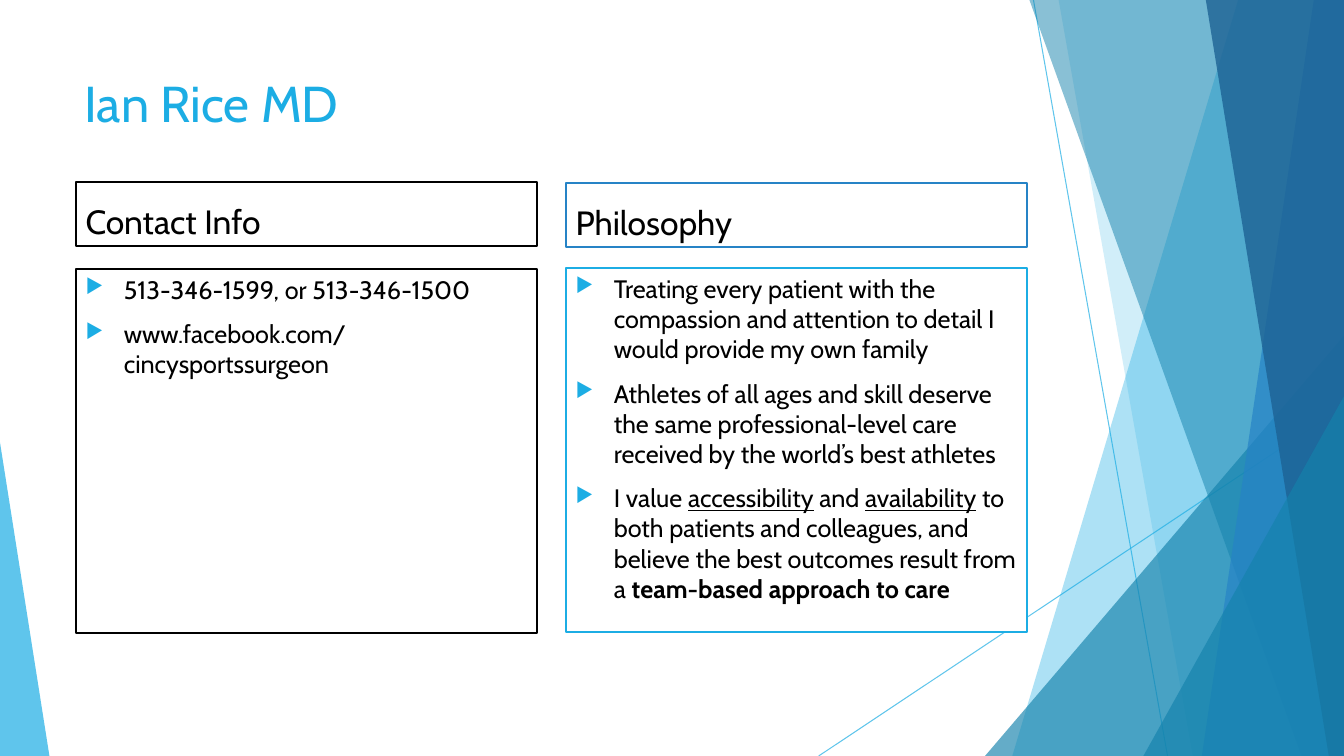
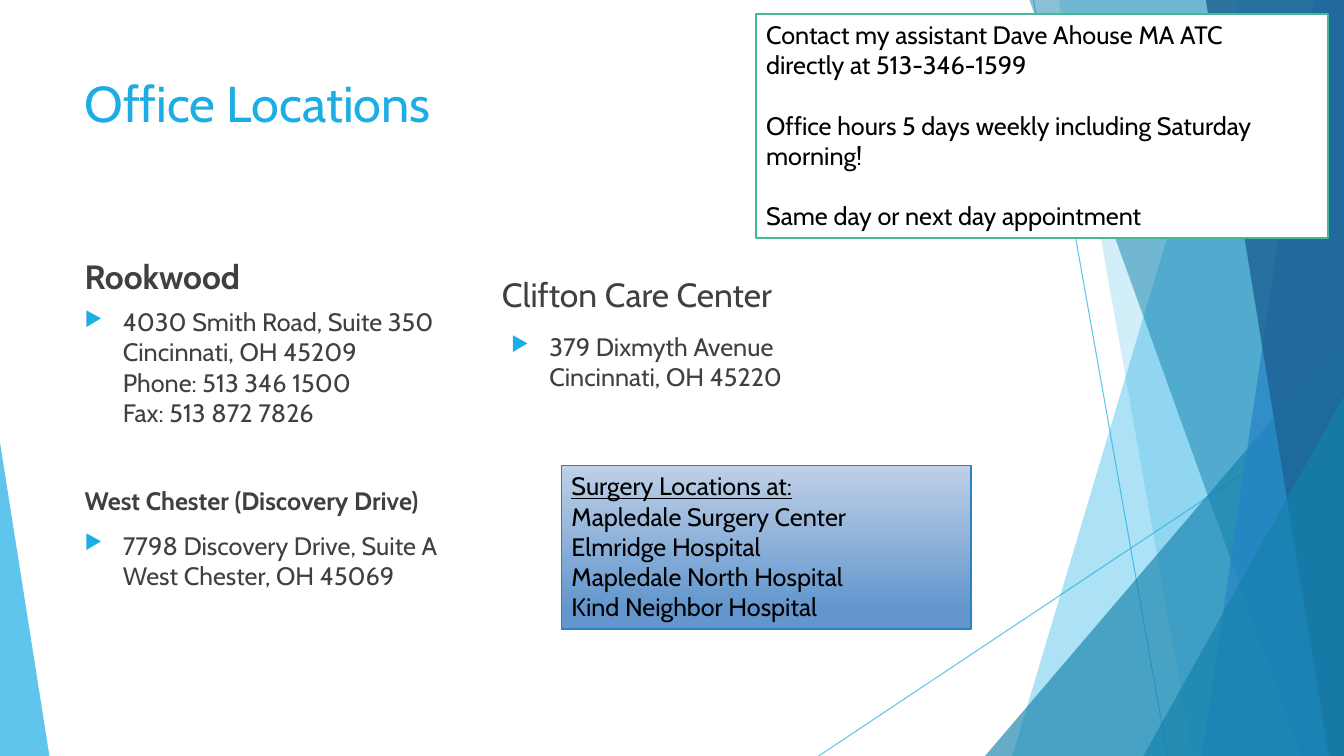
from dataclasses import dataclass

from lxml import etree
from pptx import Presentation
from pptx.dml.color import RGBColor
from pptx.enum.shapes import MSO_CONNECTOR, MSO_SHAPE
from pptx.enum.text import MSO_ANCHOR, PP_ALIGN
from pptx.oxml.ns import qn
from pptx.util import Inches, Pt

RECTANGLE, TRIANGLE = MSO_SHAPE.RECTANGLE, MSO_SHAPE.ISOSCELES_TRIANGLE
STRAIGHT = MSO_CONNECTOR.STRAIGHT
TOP, BOTTOM = MSO_ANCHOR.TOP, MSO_ANCHOR.BOTTOM
LEFT = PP_ALIGN.LEFT


@dataclass(frozen=True)
class Theme:
    font: str = "Cabin"
    sky: str = "1CADE4"
    teal: str = "1482AC"
    blue: str = "2683C6"
    navy: str = "1D6294"
    green: str = "42BA97"
    black: str = "000000"
    white: str = "FFFFFF"
    gray: str = "404040"
    gradient: tuple[tuple[float, str], ...] = ((0, "BFD0E7"), (0.88, "6296CD"))
    title_size: float = 36
    heading_size: float = 24
    body_size: float = 18
    paragraph_gap: float = 10
    blank_line: float = 21.6
    indent: float = 0.38


THEME = Theme()
WIDTH, HEIGHT = 13.33, 7.5
COLUMN, HEADING_HEIGHT, BODY_HEIGHT = 4.58, 0.63, 3.61


@dataclass(frozen=True)
class Box:
    left: float
    top: float
    width: float
    height: float

    def lengths(self) -> tuple:
        return tuple(Inches(v) for v in (self.left, self.top, self.width, self.height))


@dataclass(frozen=True)
class Panel:
    """Band that runs from its slanted left edge to the right of the slide."""
    top_x: float
    bottom_x: float
    color: str
    opacity: int


@dataclass(frozen=True)
class Wedge:
    """Right triangle standing on the bottom of the slide."""
    left: float
    width: float
    height: float
    apex: float
    color: str
    opacity: int


@dataclass(frozen=True)
class Run:
    text: str
    bold: bool = False
    underline: bool = False


@dataclass(frozen=True)
class Paragraph:
    runs: tuple[Run, ...]
    bullet: bool = False
    gap: float = 0


RAYS = (((10.25, 0), (11.58, HEIGHT)), ((WIDTH, 4.03), (8.12, HEIGHT)))
FACETS = (
    Panel(12.28, 10.04, THEME.sky, 36),
    Panel(10.5, 11.83, THEME.sky, 20),
    Wedge(9.77, 3.56, 4.17, 1, THEME.teal, 66),
    Panel(10.21, 12.91, THEME.teal, 50),
    Panel(13.03, 11.92, THEME.blue, 70),
    Panel(11.96, 13.18, THEME.navy, 80),
    Wedge(11.34, 1.99, 3.57, 1, THEME.teal, 66),
    Wedge(0, 0.49, 3.11, 0, THEME.sky, 70),
)


def rgb(color: str) -> RGBColor:
    return RGBColor.from_string(color)


def set_opacity(shape, percent: int) -> None:
    """Apply opacity to every solid colour of a shape or connector."""
    for color in shape._element.spPr.iter(qn("a:srgbClr")):
        etree.SubElement(color, qn("a:alpha"), val=str(percent * 1000))


def draw_facet(slide, facet: Panel | Wedge) -> None:
    if isinstance(facet, Panel):
        builder = slide.shapes.build_freeform(Inches(facet.top_x), 0)
        corners = ((WIDTH, 0), (WIDTH, HEIGHT), (facet.bottom_x, HEIGHT))
        builder.add_line_segments([(Inches(x), Inches(y)) for x, y in corners])
        shape = builder.convert_to_shape()
    else:
        place = Box(facet.left, HEIGHT - facet.height, facet.width, facet.height)
        shape = slide.shapes.add_shape(TRIANGLE, *place.lengths())
        shape.adjustments[0] = facet.apex
    shape.shadow.inherit = False
    shape.fill.solid()
    shape.fill.fore_color.rgb = rgb(facet.color)
    set_opacity(shape, facet.opacity)
    shape.line.fill.background()


def draw_backdrop(slide) -> None:
    for start, end in RAYS:
        ray = slide.shapes.add_connector(STRAIGHT, *(Inches(v) for v in start + end))
        ray.line.color.rgb = rgb(THEME.sky)
        ray.line.width = Pt(0.75)
        set_opacity(ray, 70)
        etree.SubElement(ray._element.spPr, qn("a:effectLst"))
    for facet in FACETS:
        draw_facet(slide, facet)


def add_text(paragraph, text: str, *, size: float, color: str,
             bold: bool = False, underline: bool = False) -> None:
    for index, line in enumerate(text.split("\n")):
        if index:
            paragraph.add_line_break()
        run = paragraph.add_run()
        run.text = line
        run.font.name = THEME.font
        run.font.size = Pt(size)
        run.font.color.rgb = rgb(color)
        run.font.bold = bold
        run.font.underline = underline


def add_bullet(paragraph) -> None:
    props = paragraph._p.get_or_add_pPr()
    indent = Inches(THEME.indent)
    props.set("marL", str(indent))
    props.set("indent", str(-indent))
    color = etree.SubElement(props, qn("a:buClr"))
    etree.SubElement(color, qn("a:srgbClr"), val=THEME.sky)
    etree.SubElement(props, qn("a:buSzPct"), val="80000")
    etree.SubElement(props, qn("a:buChar"), char="▶")


def add_box(slide, place: Box, paragraphs: list[Paragraph], *,
            size: float = THEME.body_size, color: str = THEME.black,
            border: str | None = None, border_width: float = 1.5,
            gradient: bool = False, anchor=TOP) -> None:
    """Place text, inside a filled frame when a border colour is given."""
    if border:
        shape = slide.shapes.add_shape(RECTANGLE, *place.lengths())
        shape.shadow.inherit = False
        shape.line.color.rgb = rgb(border)
        shape.line.width = Pt(border_width)
        if gradient:
            shape.fill.gradient()
            shape.fill.gradient_angle = 270
            for stop, (position, tint) in zip(shape.fill.gradient_stops, THEME.gradient):
                stop.position = position
                stop.color.rgb = rgb(tint)
        else:
            shape.fill.solid()
            shape.fill.fore_color.rgb = rgb(THEME.white)
    else:
        shape = slide.shapes.add_textbox(*place.lengths())
    frame = shape.text_frame
    frame.word_wrap = True
    frame.vertical_anchor = anchor
    for index, content in enumerate(paragraphs):
        paragraph = frame.add_paragraph() if index else frame.paragraphs[0]
        paragraph.alignment = LEFT
        if content.bullet:
            add_bullet(paragraph)
        paragraph.space_before = Pt(content.gap if index else 0)
        for run in content.runs:
            add_text(paragraph, run.text, size=size, color=color,
                     bold=run.bold, underline=run.underline)


def plain(text: str, *, gap: float = 0, bold: bool = False,
          underline: bool = False) -> Paragraph:
    return Paragraph((Run(text, bold, underline),), gap=gap)


def bullet(*parts: str | Run) -> Paragraph:
    runs = tuple(Run(part) if isinstance(part, str) else part for part in parts)
    return Paragraph(runs, bullet=True, gap=THEME.paragraph_gap)


def add_heading(slide, left: float, top: float, text: str, *, bold: bool = False,
                color: str = THEME.gray, border: str | None = None) -> None:
    add_box(slide, Box(left, top, COLUMN, HEADING_HEIGHT), [plain(text, bold=bold)],
            size=THEME.heading_size, color=color, border=border, anchor=BOTTOM)


def start_slide(deck, title: str):
    slide = deck.slides.add_slide(deck.slide_layouts[6])
    draw_backdrop(slide)
    add_box(slide, Box(0.74, 0.67, 9.4, 1.44), [plain(title)],
            size=THEME.title_size, color=THEME.sky)
    return slide


def build_profile(deck) -> None:
    slide = start_slide(deck, "Ian Rice MD")
    contact = [
        bullet("513-346-1599, or 513-346-1500"),
        bullet("www.facebook.com/cincysportssurgeon"),
    ]
    philosophy = [
        bullet("Treating every patient with the compassion and attention to detail I "
               "would provide my own family"),
        bullet("Athletes of all ages and skill deserve the same professional-level care "
               "received by the world’s best athletes"),
        bullet("I value ", Run("accessibility", underline=True), " and ",
               Run("availability", underline=True),
               " to both patients and colleagues, and believe the best outcomes "
               "result from a ", Run("team-based approach to care", bold=True)),
    ]
    columns = (
        (0.75, 1.81, 2.67, "Contact Info", contact, THEME.black, THEME.black),
        (5.61, 1.82, 2.66, "Philosophy", philosophy, THEME.blue, THEME.sky),
    )
    for left, heading_top, body_top, heading, body, heading_border, body_border in columns:
        add_heading(slide, left, heading_top, heading,
                    color=THEME.black, border=heading_border)
        add_box(slide, Box(left, body_top, COLUMN, BODY_HEIGHT), body, border=body_border)


def build_locations(deck) -> None:
    slide = start_slide(deck, "Office Locations")
    add_heading(slide, 0.74, 2.36, "Rookwood", bold=True)
    add_box(slide, Box(0.74, 2.99, COLUMN, BODY_HEIGHT), [
        bullet("4030 Smith Road, Suite 350\nCincinnati, OH 45209\n"
               "Phone: 513 346 1500\nFax: 513 872 7826"),
        plain("West Chester (Discovery Drive)", bold=True,
              gap=THEME.blank_line + 2 * THEME.paragraph_gap),
        bullet("7798 Discovery Drive, Suite A\nWest Chester, OH 45069"),
    ], color=THEME.gray)

    add_heading(slide, 4.88, 2.54, "Clifton Care Center")
    add_box(slide, Box(4.97, 3.24, COLUMN, 1.33),
            [bullet("379 Dixmyth Avenue\nCincinnati, OH 45220")], color=THEME.gray)

    hospitals = ("Mapledale Surgery Center", "Elmridge Hospital",
                 "Mapledale North Hospital", "Kind Neighbor Hospital")
    add_box(slide, Box(5.57, 4.62, 4.06, 1.62),
            [plain("Surgery Locations at:", underline=True), *map(plain, hospitals)],
            border=THEME.blue, border_width=1, gradient=True)

    add_box(slide, Box(7.5, 0.14, 5.67, 2.22), [
        plain("Contact my assistant Dave Ahouse MA ATC"),
        plain("directly at 513-346-1599"),
        plain("Office hours 5 days weekly including Saturday morning!",
              gap=THEME.blank_line),
        plain("Same day or next day appointment", gap=THEME.blank_line),
    ], border=THEME.green)


def main() -> None:
    deck = Presentation()
    deck.slide_width, deck.slide_height = Inches(WIDTH), Inches(HEIGHT)
    build_profile(deck)
    build_locations(deck)
    deck.save("out.pptx")


if __name__ == "__main__":
    main()
